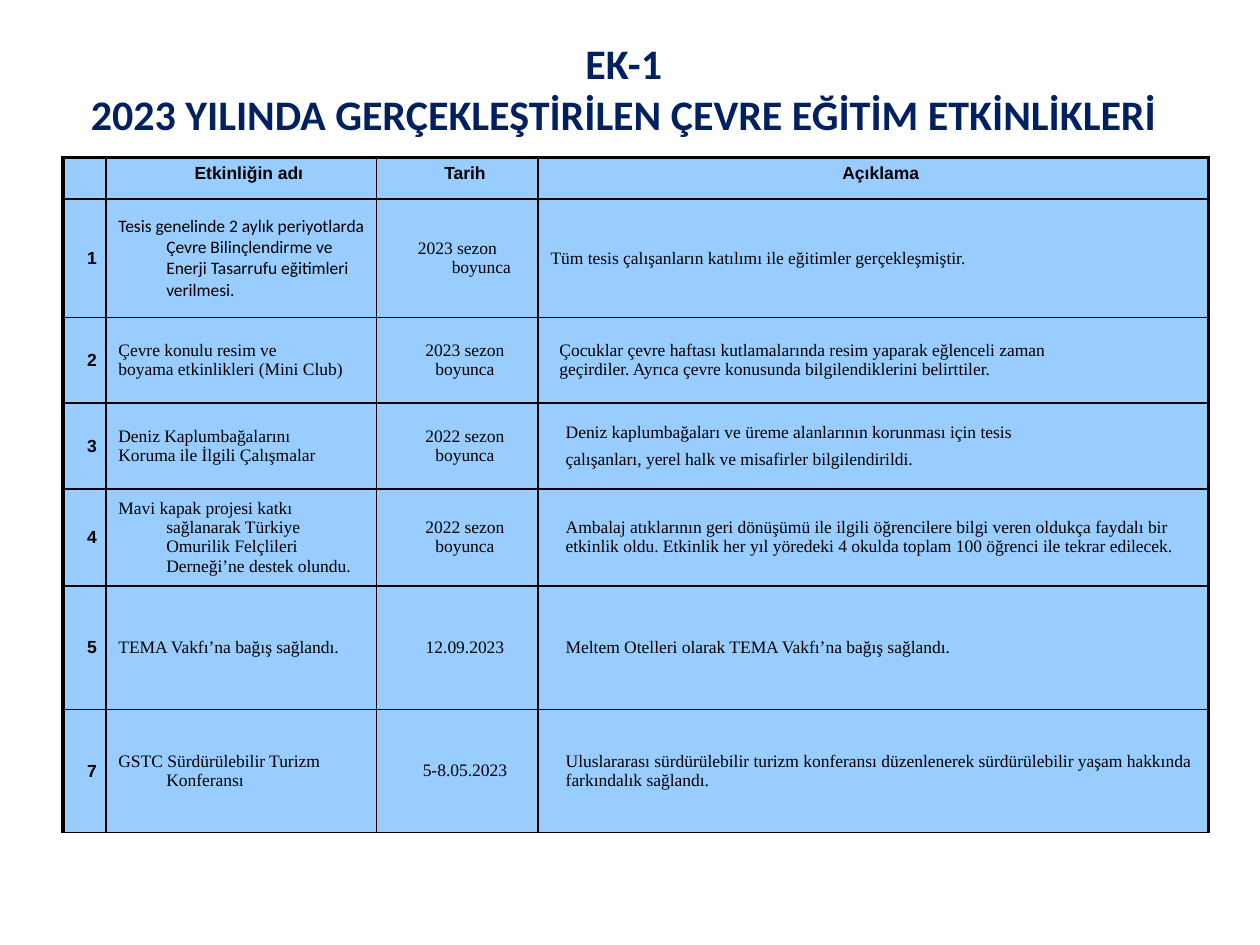
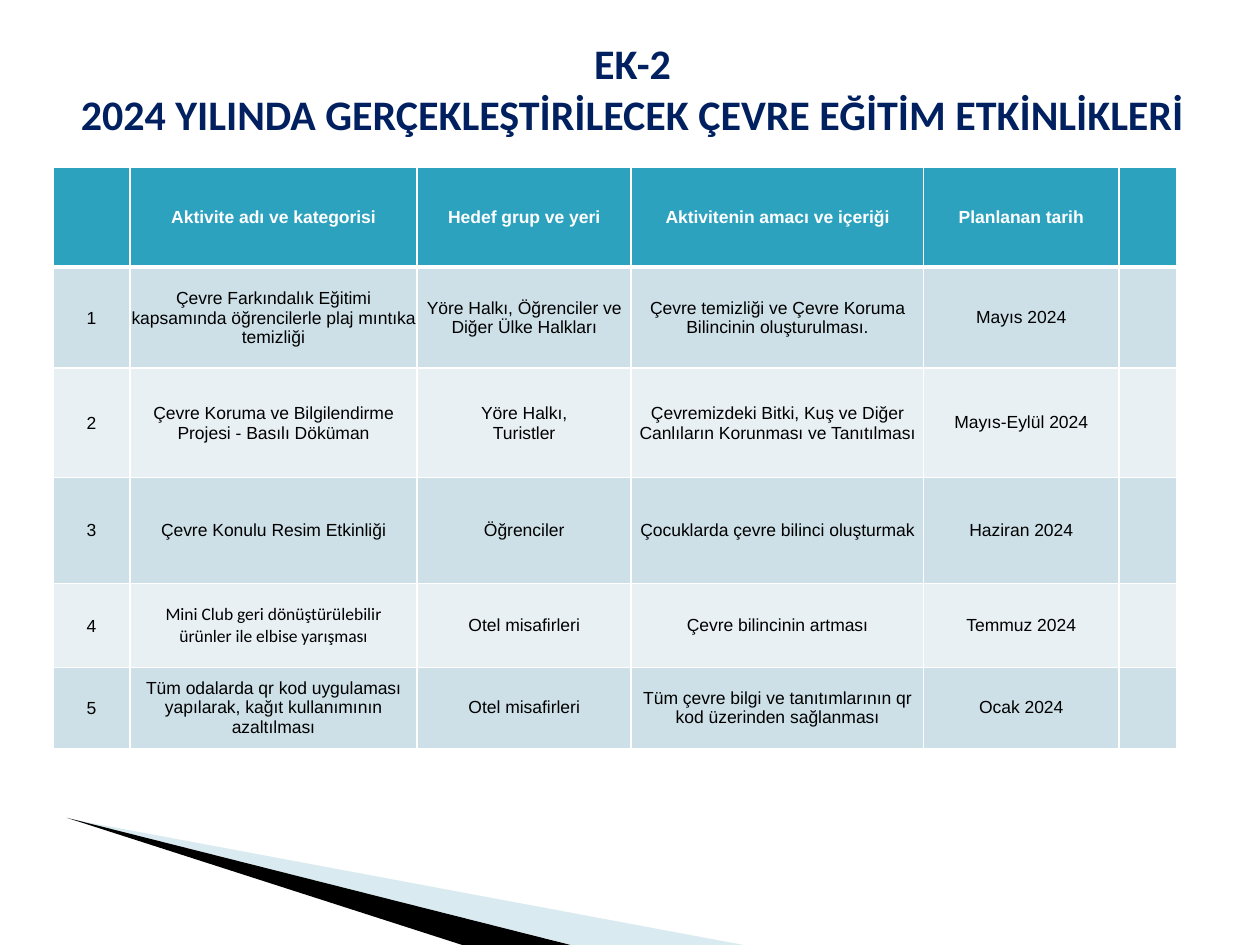
from dataclasses import dataclass, replace
from typing import Optional

from lxml import etree
from pptx import Presentation
from pptx import util as u
from pptx.dml.color import RGBColor
from pptx.enum import text as t
from pptx.oxml import ns

Inches = u.Inches


@dataclass(frozen=True)
class Theme:
    title: str = "002060"
    ink: str = "000000"
    white: str = "FFFFFF"
    sky: str = "99CCFF"
    teal: str = "2DA2BF"
    band_dark: str = "CDE0E8"
    band_light: str = "E8F0F4"
    wedge: str = "A0CBDC"
    title_size: int = 24
    cell_size: int = 10
    sans: str = "Arial"
    serif: str = "Times New Roman"
    humanist: str = "Calibri"


THEME = Theme()


@dataclass(frozen=True)
class CellStyle:
    font: str = THEME.sans
    color: str = THEME.ink
    bold: bool = False
    centered: bool = True
    middle: bool = True
    left: float = 0
    first_line: float = 0
    gap: float = 0  # points between paragraphs
    margins: tuple[float, float, float, float] = (0.1, 0.05, 0.1, 0.05)


@dataclass(frozen=True)
class Cell:
    text: str
    style: CellStyle


@dataclass(frozen=True)
class Borders:
    color: str
    left: float = 1
    top: float = 1
    right: float = 1
    bottom: float = 1
    inner: float = 1
    header: float = 1  # line under the header row


@dataclass(frozen=True)
class Grid:
    left: float
    top: float
    columns: tuple[float, ...]
    rows: tuple[float, ...]
    fills: tuple[str, str, str]  # header, odd rows, even rows
    borders: Borders


@dataclass(frozen=True)
class Wedge:
    color: str
    points: tuple[tuple[float, float], ...]
    opacity: Optional[int] = None


# Cell styles of the first table
NUMBER = CellStyle(bold=True, left=0.12)
HEADING = replace(NUMBER, middle=False)
DATE = CellStyle(font=THEME.serif, left=0.12)
NOTE = replace(DATE, centered=False, gap=4)
HANGING = CellStyle(font=THEME.serif, centered=False, left=0.38, first_line=-0.38)
SHIFTED = replace(NOTE, left=0.07, gap=0)

# Cell styles of the second table
TIGHT = CellStyle(margins=(0.01, 0.01, 0.01, 0))
ROOMY = CellStyle(margins=(0.07, 0, 0.07, 0))
PLAN_HEADING = replace(TIGHT, color=THEME.white, bold=True)

DONE_GRID = Grid(
    0.5, 1.25, (0.34, 2.15, 1.28, 5.32), (0.33, 0.94, 0.68, 0.68, 0.77, 0.98, 0.98),
    (THEME.sky,) * 3, Borders(THEME.ink, left=2.25, top=2.25, right=2.25))
PLAN_GRID = Grid(
    0.42, 1.33, (0.61, 2.28, 1.7, 2.32, 1.55, 0.46), (0.79, 0.8, 0.87, 0.84, 0.67, 0.64),
    (THEME.teal, THEME.band_dark, THEME.band_light), Borders(THEME.white, header=3))

DONE_HEADINGS = ("", "Etkinliğin adı", "Tarih", "Açıklama")
DONE_EVENTS = (
    ("1",
     Cell("Tesis genelinde 2 aylık periyotlarda Çevre Bilinçlendirme ve Enerji "
          "Tasarrufu eğitimleri verilmesi.", replace(HANGING, font=THEME.humanist)),
     Cell("2023 sezon boyunca", replace(HANGING, centered=True)),
     Cell("Tüm tesis çalışanların katılımı ile eğitimler gerçekleşmiştir.", HANGING)),
    ("2", "Çevre konulu resim ve\nboyama etkinlikleri (Mini Club)", "2023 sezon boyunca",
     Cell("Çocuklar çevre haftası kutlamalarında resim yaparak eğlenceli zaman\n"
          "geçirdiler. Ayrıca çevre konusunda bilgilendiklerini belirttiler.", SHIFTED)),
    ("3", "Deniz Kaplumbağalarını\nKoruma ile İlgili Çalışmalar", "2022 sezon boyunca",
     "Deniz kaplumbağaları ve üreme alanlarının korunması için tesis\n"
     "çalışanları, yerel halk ve misafirler bilgilendirildi."),
    ("4", "Mavi kapak projesi katkı sağlanarak Türkiye Omurilik Felçlileri "
     "Derneği’ne destek olundu.", "2022 sezon boyunca",
     "Ambalaj atıklarının geri dönüşümü ile ilgili öğrencilere bilgi veren oldukça "
     "faydalı bir etkinlik oldu. Etkinlik her yıl yöredeki 4 okulda toplam 100 öğrenci "
     "ile tekrar edilecek."),
    ("5", "TEMA Vakfı’na bağış sağlandı.", "12.09.2023",
     "Meltem Otelleri olarak TEMA Vakfı’na bağış sağlandı."),
    ("7", "GSTC Sürdürülebilir Turizm Konferansı", "5-8.05.2023",
     "Uluslararası sürdürülebilir turizm konferansı düzenlenerek sürdürülebilir yaşam "
     "hakkında farkındalık sağlandı."),
)

PLAN_HEADINGS = ("", "Aktivite adı ve kategorisi", "Hedef grup ve yeri",
                 "Aktivitenin amacı ve içeriği", "Planlanan tarih", "")
PLAN_EVENTS = (
    ("1", "Çevre Farkındalık Eğitimi kapsamında öğrencilerle plaj mıntıka temizliği",
     "Yöre Halkı, Öğrenciler ve Diğer Ülke Halkları",
     "Çevre temizliği ve Çevre Koruma Bilincinin oluşturulması.", "Mayıs 2024", ""),
    ("2", "Çevre Koruma ve Bilgilendirme Projesi - Basılı Döküman",
     "Yöre Halkı,\nTuristler",
     "Çevremizdeki Bitki, Kuş ve Diğer Canlıların Korunması ve Tanıtılması",
     "Mayıs-Eylül 2024", ""),
    ("3", "Çevre Konulu Resim Etkinliği", "Öğrenciler",
     "Çocuklarda çevre bilinci oluşturmak", "Haziran 2024", ""),
    ("4", Cell("Mini Club geri dönüştürülebilir ürünler ile elbise yarışması",
               replace(ROOMY, font=THEME.humanist)),
     Cell("Otel misafirleri", ROOMY), Cell("Çevre bilincinin artması", ROOMY),
     "Temmuz 2024", ""),
    ("5", Cell("Tüm odalarda qr kod uygulaması yapılarak, kağıt kullanımının azaltılması",
               ROOMY),
     Cell("Otel misafirleri", ROOMY),
     Cell("Tüm çevre bilgi ve tanıtımlarının qr kod üzerinden sağlanması", ROOMY),
     "Ocak 2024", ""),
)

WEDGES = (
    Wedge(THEME.wedge, ((0.55, 6.5), (5.9, 7.5), (4.54, 7.5)), opacity=40),
    Wedge(THEME.ink, ((0.53, 6.49), (4.53, 7.5), (3.67, 7.5))),
)


def rgb(color: str) -> RGBColor:
    return RGBColor.from_string(color)


def set_font(paragraph, name: str, size: int, color: str, bold: bool) -> None:
    font = paragraph.font
    font.name, font.size, font.bold = name, u.Pt(size), bold
    font.color.rgb = rgb(color)


def add_titled_slide(presentation, title: str, left: float, width: float):
    slide = presentation.slides.add_slide(presentation.slide_layouts[5])
    shape = slide.shapes.title
    shape.left, shape.top = Inches(left), Inches(0.25)
    shape.width, shape.height = Inches(width), Inches(0.91)
    frame = shape.text_frame
    frame.text = title
    frame.word_wrap = False
    frame.auto_size = t.MSO_AUTO_SIZE.NONE
    frame.vertical_anchor = t.MSO_ANCHOR.TOP
    for paragraph in frame.paragraphs:
        paragraph.alignment = t.PP_ALIGN.CENTER
        paragraph.space_before = u.Pt(0)
        set_font(paragraph, THEME.humanist, THEME.title_size, THEME.title, True)
    return slide


def write_cell(cell, content: Cell) -> None:
    style = content.style
    cell.text = content.text
    (cell.margin_left, cell.margin_top,
     cell.margin_right, cell.margin_bottom) = map(Inches, style.margins)
    cell.vertical_anchor = t.MSO_ANCHOR.MIDDLE if style.middle else t.MSO_ANCHOR.TOP
    for index, paragraph in enumerate(cell.text_frame.paragraphs):
        paragraph.alignment = t.PP_ALIGN.CENTER if style.centered else t.PP_ALIGN.LEFT
        if index:
            paragraph.space_before = u.Pt(style.gap)
        properties = paragraph._p.get_or_add_pPr()
        properties.set("marL", str(Inches(style.left)))
        properties.set("indent", str(Inches(style.first_line)))
        set_font(paragraph, style.font, THEME.cell_size, style.color, style.bold)


def draw_borders(cell, color: str, widths: dict[str, float]) -> None:
    # Border lines come before the fill in the cell properties
    properties = cell._tc.get_or_add_tcPr()
    for position, (side, width) in enumerate(widths.items()):
        line = etree.Element(ns.qn(f"a:ln{side}"), w=str(u.Pt(width)))
        fill = etree.SubElement(line, ns.qn("a:solidFill"))
        etree.SubElement(fill, ns.qn("a:srgbClr"), val=color)
        properties.insert(position, line)


def add_grid(slide, grid: Grid, headings: tuple, heading_style: CellStyle,
             events: tuple, column_styles: tuple[CellStyle, ...]) -> None:
    row_count, column_count = len(grid.rows), len(grid.columns)
    table = slide.shapes.add_table(
        row_count, column_count, Inches(grid.left), Inches(grid.top),
        Inches(sum(grid.columns)), Inches(sum(grid.rows))).table
    table.first_row = table.horz_banding = False
    for column, width in zip(table.columns, grid.columns):
        column.width = Inches(width)
    for row, height in zip(table.rows, grid.rows):
        row.height = Inches(height)

    borders = grid.borders
    horizontal = [borders.top, borders.header, *[borders.inner] * (row_count - 2),
                  borders.bottom]
    vertical = [borders.left, *[borders.inner] * (column_count - 1), borders.right]
    for r, values in enumerate((headings, *events)):
        for c, value in enumerate(values):
            cell = table.cell(r, c)
            style = column_styles[c] if r else heading_style
            write_cell(cell, value if isinstance(value, Cell) else Cell(value, style))
            cell.fill.solid()
            cell.fill.fore_color.rgb = rgb(grid.fills[2 - r % 2 if r else 0])
            draw_borders(cell, borders.color, {
                "L": vertical[c], "R": vertical[c + 1],
                "T": horizontal[r], "B": horizontal[r + 1]})


def add_wedge(slide, wedge: Wedge) -> None:
    start, *others = [(Inches(x), Inches(y)) for x, y in wedge.points]
    builder = slide.shapes.build_freeform(*start)
    builder.add_line_segments(others, close=True)
    shape = builder.convert_to_shape()
    shape.shadow.inherit = False
    shape.line.fill.background()
    shape.fill.solid()
    shape.fill.fore_color.rgb = rgb(wedge.color)
    if wedge.opacity is not None:
        color = shape._element.spPr.find(".//" + ns.qn("a:srgbClr"))
        etree.SubElement(color, ns.qn("a:alpha"), val=str(wedge.opacity * 1000))


def main() -> None:
    presentation = Presentation()
    presentation.slide_width, presentation.slide_height = Inches(10), Inches(7.5)

    # Activities carried out in 2023
    slide = add_titled_slide(
        presentation, "EK-1\n2023 YILINDA GERÇEKLEŞTİRİLEN ÇEVRE EĞİTİM ETKİNLİKLERİ",
        0.58, 8.74)
    add_grid(slide, DONE_GRID, DONE_HEADINGS, HEADING, DONE_EVENTS,
             (NUMBER, HANGING, DATE, NOTE))

    # Activities planned for 2024
    slide = add_titled_slide(
        presentation, "EK-2\n2024 YILINDA GERÇEKLEŞTİRİLECEK ÇEVRE EĞİTİM ETKİNLİKLERİ",
        0.5, 9.04)
    for wedge in WEDGES:
        add_wedge(slide, wedge)
    add_grid(slide, PLAN_GRID, PLAN_HEADINGS, PLAN_HEADING, PLAN_EVENTS,
             (TIGHT, TIGHT, TIGHT, TIGHT, ROOMY, TIGHT))

    presentation.save("out.pptx")


if __name__ == "__main__":
    main()
